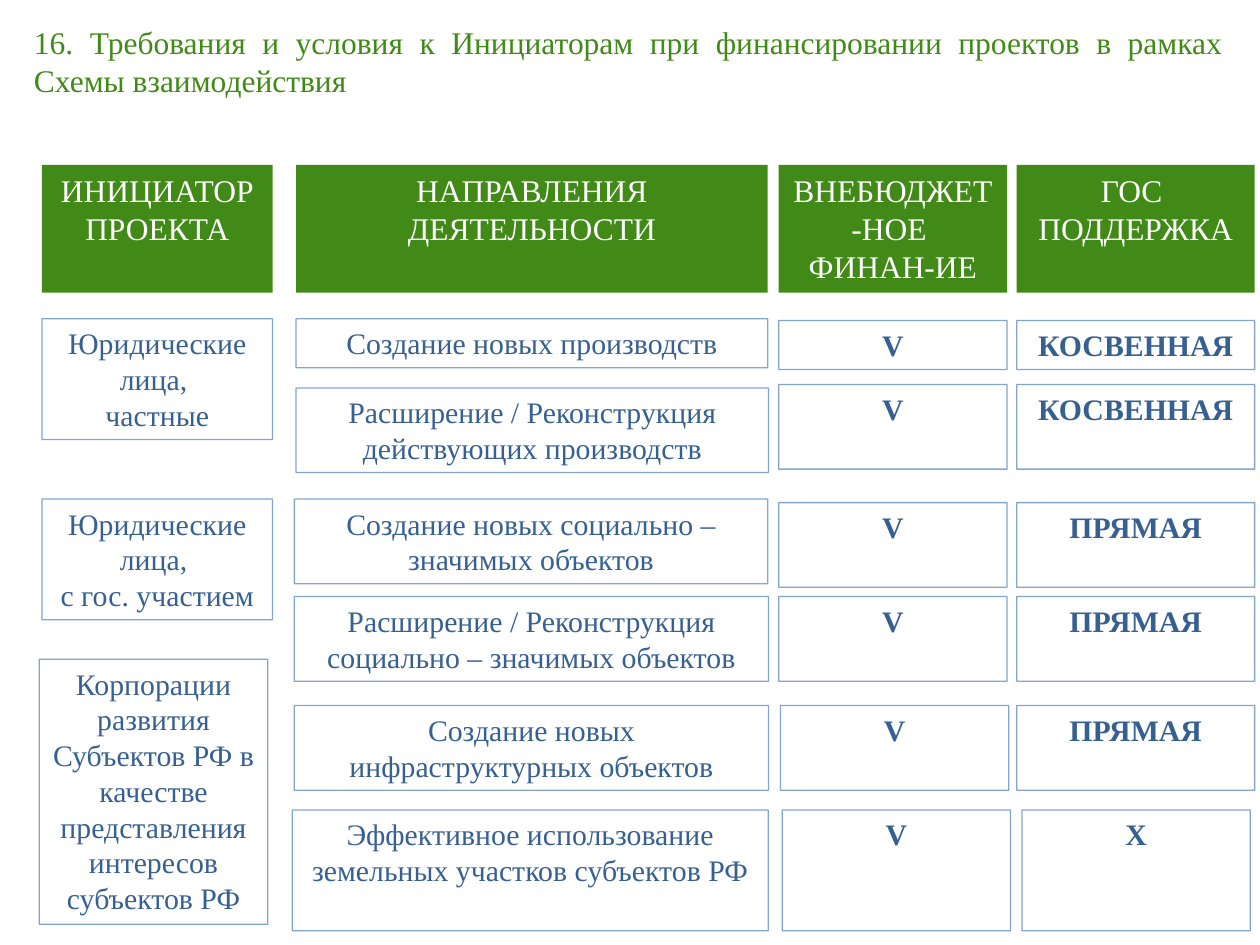
from lxml import etree
from pptx import Presentation
from pptx.dml.color import RGBColor
from pptx.enum import shapes, text
from pptx.oxml import ns
from pptx.util import Pt

COLORS = {"green": "418A18", "navy": "376092", "border": "4F81BD", "white": "FFFFFF"}
FONT = "Times New Roman"
CENTER = text.PP_ALIGN.CENTER

# Column offsets and widths inside the matrix
COLUMNS = {
    "initiator": (2, 131.8),
    "activity": (147.2, 269.5),
    "funding": (423, 130.5),
    "support": (559, 136),
}
HEADERS = {
    "initiator": "ИНИЦИАТОР ПРОЕКТА",
    "activity": "НАПРАВЛЕНИЯ ДЕЯТЕЛЬНОСТИ",
    "funding": "ВНЕБЮДЖЕТ-НОЕ \nФИНАН-ИЕ",
    "support": "ГОС \nПОДДЕРЖКА",
}
# Text, left, top, width, height
INITIATORS = [
    ("Юридические лица, \nчастные", 2, 88, 131.8, 69),
    ("Юридические лица, \nс гос. участием", 2, 191, 131.8, 69),
    ("Корпорации развития Субъектов РФ в качестве представления интересов субъектов РФ",
     0.5, 282.5, 130.5, 151.5),
]
# Text, left, top, width, height
ACTIVITIES = [
    ("Создание новых производств", 147.2, 88, 269.5, 28),
    ("Расширение / Реконструкция действующих производств", 147.2, 127.5, 270, 48.4),
    ("Создание новых социально – значимых объектов", 146.2, 191, 270.5, 48.4),
    ("Расширение / Реконструкция социально – значимых объектов", 146.2, 246.7, 271, 48.4),
    ("Создание новых инфраструктурных объектов", 146.2, 309, 271, 48.4),
    ("Эффективное использование земельных участков субъектов РФ", 145, 368.7, 272, 69),
]
# Support, top, height, funding left, support left, support width
MARKS = [
    ("КОСВЕННАЯ", 89, 28, 423, 559, 136),
    ("КОСВЕННАЯ", 125.5, 48.4, 423, 559, 136),
    ("ПРЯМАЯ", 193, 48.4, 423, 559, 136),
    ("ПРЯМАЯ", 246.7, 48.4, 423, 559, 136),
    ("ПРЯМАЯ", 309, 48.4, 424, 559, 136),
    ("Х", 368.7, 69, 425, 562, 130.5),
]


def color(name):
    return RGBColor.from_string(COLORS[name])


def write(shape, content, size, color_name, alignment, bold=False):
    frame = shape.text_frame
    frame.text = content
    frame.word_wrap = True
    frame.auto_size = text.MSO_AUTO_SIZE.NONE
    frame.vertical_anchor = text.MSO_ANCHOR.TOP
    frame.margin_left = frame.margin_right = Pt(7.2)
    frame.margin_top = frame.margin_bottom = Pt(3.6)
    for paragraph in frame.paragraphs:
        paragraph.alignment = alignment
        for run in paragraph.runs:
            run.font.name = FONT
            run.font.size = Pt(size)
            run.font.bold = bold
            run.font.color.rgb = color(color_name)


def add_box(slide, left, top, width, height):
    box = slide.shapes.add_shape(
        shapes.MSO_SHAPE.RECTANGLE, Pt(left), Pt(top), Pt(width), Pt(height))
    box.shadow.inherit = False
    return box


def add_header(slide, content, left, top, width, height):
    box = add_box(slide, left, top, width, height)
    box.fill.solid()
    box.fill.fore_color.rgb = color("green")
    box.line.fill.background()
    write(box, content, 18, "white", CENTER)


def add_cell(slide, content, left, top, width, height, bold=False):
    """Add an unfilled cell with a thin, 70 % opaque border."""
    box = add_box(slide, left, top, width, height)
    box.fill.background()
    box.line.width = Pt(0.75)
    box.line.color.rgb = color("border")
    border = box.line.fill._xPr.find(ns.qn("a:solidFill"))[0]
    etree.SubElement(border, ns.qn("a:alpha"), val="70000")
    write(box, content, 17, "navy", CENTER, bold)


def add_title(slide, left, top, width, height):
    title = slide.shapes.title
    title.left, title.top = Pt(left), Pt(top)
    title.width, title.height = Pt(width), Pt(height)
    write(title,
          "16. Требования и условия к Инициаторам при финансировании проектов "
          "в рамках Схемы взаимодействия",
          18, "green", text.PP_ALIGN.JUSTIFY)


def add_matrix(slide, left, top):
    for name, (offset, width) in COLUMNS.items():
        add_header(slide, HEADERS[name], left + offset, top, width, 73)
    for content, x, y, width, height in INITIATORS + ACTIVITIES:
        add_cell(slide, content, left + x, top + y, width, height)
    funding_width = COLUMNS["funding"][1]
    for support, y, height, funding_x, support_x, support_width in MARKS:
        add_cell(slide, "V", left + funding_x, top + y, funding_width, height, bold=True)
        add_cell(slide, support, left + support_x, top + y, support_width, height, bold=True)


def main():
    presentation = Presentation()
    presentation.slide_width, presentation.slide_height = Pt(720), Pt(540)
    slide = presentation.slides.add_slide(presentation.slide_layouts[5])
    add_title(slide, 12.2, 9.4, 694, 51)
    add_matrix(slide, 22, 94.2)
    presentation.save("out.pptx")


if __name__ == "__main__":
    main()
